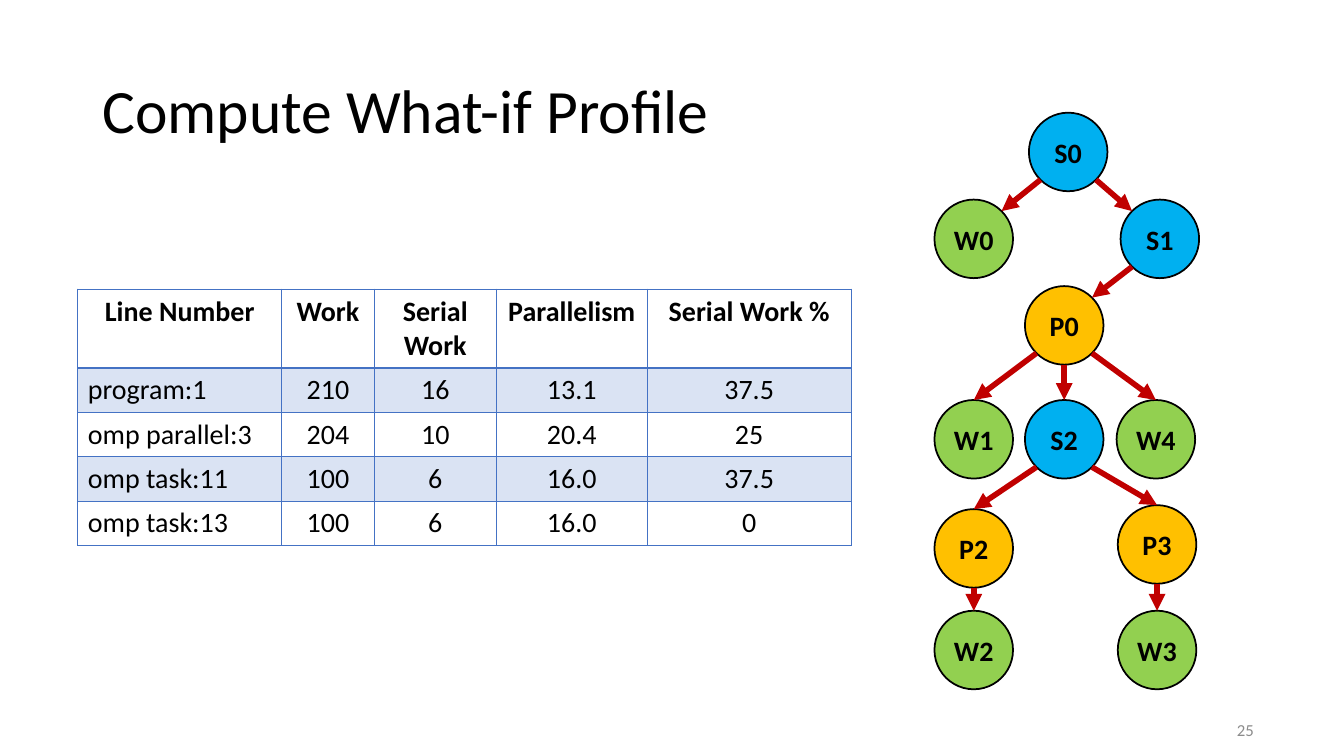
"""Build the what-if profile slide: a table of work per line and a task tree."""
from math import sqrt

from lxml.etree import SubElement
from pptx import Presentation
from pptx.dml.color import RGBColor
from pptx.enum.shapes import MSO_CONNECTOR, MSO_SHAPE
from pptx.enum.text import MSO_ANCHOR, PP_ALIGN
from pptx.oxml.ns import qn
from pptx.util import Cm, Pt

TITLE = "Compute What-if Profile"
PAGE = "25"
PROFILE = [
    ("Line Number", "Work", "Serial Work", "Parallelism", "Serial Work %"),
    ("program:1", "210", "16", "13.1", "37.5"),
    ("omp parallel:3", "204", "10", "20.4", "25"),
    ("omp task:11", "100", "6", "16.0", "37.5"),
    ("omp task:13", "100", "6", "16.0", "0"),
]
COLUMN_WIDTHS = (5.14, 2.33, 3.08, 3.8, 5.14)
HEADER_HEIGHT, ROW_HEIGHT = 1.98, 1.12

NODE_COLORS = {"S": "00B0F0", "W": "92D050", "P": "FFC000"}
NODES = {
    "S0": (25.93, 2.84),
    "W0": (23.55, 5.03),
    "S1": (28.24, 5.03),
    "P0": (25.83, 7.21),
    "W1": (23.55, 10.08),
    "S2": (25.83, 10.08),
    "W4": (28.14, 10.08),
    "P2": (23.55, 12.83),
    "P3": (28.17, 12.73),
    "W2": (23.55, 15.39),
    "W3": (28.17, 15.39),
}
EDGES = [
    ("S0", "lower left", "W0", "upper right"),
    ("S0", "lower right", "S1", "upper left"),
    ("S1", "lower left", "P0", "upper right"),
    ("P0", "lower left", "W1", "top"),
    ("P0", "bottom", "S2", "top"),
    ("P0", "lower right", "W4", "top"),
    ("S2", "lower left", "P2", "top"),
    ("S2", "lower right", "P3", "top"),
    ("P2", "bottom", "W2", "top"),
    ("P3", "bottom", "W3", "top"),
]
DIAMETER = 1.98
DIAGONAL = sqrt(0.5)
RIM = {
    "top": (0, -1),
    "bottom": (0, 1),
    "upper left": (-DIAGONAL, -DIAGONAL),
    "upper right": (DIAGONAL, -DIAGONAL),
    "lower left": (-DIAGONAL, DIAGONAL),
    "lower right": (DIAGONAL, DIAGONAL),
}


def color(value):
    return RGBColor.from_string(value)


def write(frame, text, size=20, bold=False, ink="000000", align=PP_ALIGN.CENTER,
          anchor=MSO_ANCHOR.MIDDLE, wrap=True, spacing=None):
    frame.word_wrap = wrap
    frame.vertical_anchor = anchor
    paragraph = frame.paragraphs[0]
    paragraph.alignment = align
    paragraph.line_spacing = spacing
    run = paragraph.add_run()
    run.text = text
    run.font.name = "Calibri"
    run.font.size = Pt(size)
    run.font.bold = bold
    run.font.color.rgb = color(ink)


def add_border(cell, side, width):
    border = SubElement(cell._tc.get_or_add_tcPr(), qn(f"a:ln{side}"), w=str(Pt(width)))
    fill = SubElement(border, qn("a:solidFill"))
    SubElement(fill, qn("a:srgbClr"), val="4472C4")


def add_profile(slide):
    height = HEADER_HEIGHT + ROW_HEIGHT * (len(PROFILE) - 1)
    table = slide.shapes.add_table(
        len(PROFILE), len(COLUMN_WIDTHS), Cm(1.96), Cm(7.29),
        Cm(sum(COLUMN_WIDTHS)), Cm(height)).table
    table.horz_banding = False
    for column, width in zip(table.columns, COLUMN_WIDTHS):
        column.width = Cm(width)
    for r, entries in enumerate(PROFILE):
        table.rows[r].height = Cm(ROW_HEIGHT if r else HEADER_HEIGHT)
        for c, entry in enumerate(entries):
            cell = table.cell(r, c)
            left_aligned = r > 0 and c == 0
            write(cell.text_frame, entry, bold=r == 0, anchor=None, wrap=None,
                  align=PP_ALIGN.LEFT if left_aligned else PP_ALIGN.CENTER)
            for side in "LRTB":
                rule = (r, side) in ((0, "B"), (1, "T"))
                add_border(cell, side, 2 if rule else 1)
            if r % 2:
                cell.fill.solid()
                cell.fill.fore_color.rgb = color("DAE3F3")
            else:
                cell.fill.background()


def add_node(slide, label, left, top):
    node = slide.shapes.add_shape(
        MSO_SHAPE.OVAL, Cm(left), Cm(top), Cm(DIAMETER), Cm(DIAMETER))
    node.shadow.inherit = False
    node.fill.solid()
    node.fill.fore_color.rgb = color(NODE_COLORS[label[0]])
    node.line.color.rgb = color("000000")
    node.line.width = Pt(1.25)
    write(node.text_frame, label, bold=True, wrap=False)


def rim_point(label, place):
    radius = DIAMETER / 2
    return [Cm(start + radius * (1 + shift))
            for start, shift in zip(NODES[label], RIM[place])]


def add_edge(slide, parent, leaving, child, entering):
    edge = slide.shapes.add_connector(
        MSO_CONNECTOR.STRAIGHT, *rim_point(parent, leaving), *rim_point(child, entering))
    edge.line.color.rgb = color("C00000")
    edge.line.width = Pt(4)
    SubElement(edge.line._get_or_add_ln(), qn("a:tailEnd"), type="triangle")
    SubElement(edge._element.spPr, qn("a:effectLst"))


def main():
    deck = Presentation()
    deck.slide_width, deck.slide_height = Cm(33.87), Cm(19.05)
    slide = deck.slides.add_slide(deck.slide_layouts[5])

    title = slide.shapes.title
    title.left, title.top, title.width, title.height = Cm(2.33), Cm(1.01), Cm(29.21), Cm(3.68)
    write(title.text_frame, TITLE, size=44, align=PP_ALIGN.LEFT, spacing=0.9)

    page = slide.shapes.add_textbox(Cm(24.23), Cm(17.88), Cm(7.62), Cm(1.01))
    write(page.text_frame, PAGE, size=12, ink="8C8C8C", align=PP_ALIGN.RIGHT)

    for label, (left, top) in NODES.items():
        add_node(slide, label, left, top)
    for edge in EDGES:
        add_edge(slide, *edge)
    add_profile(slide)
    deck.save("out.pptx")


if __name__ == "__main__":
    main()
